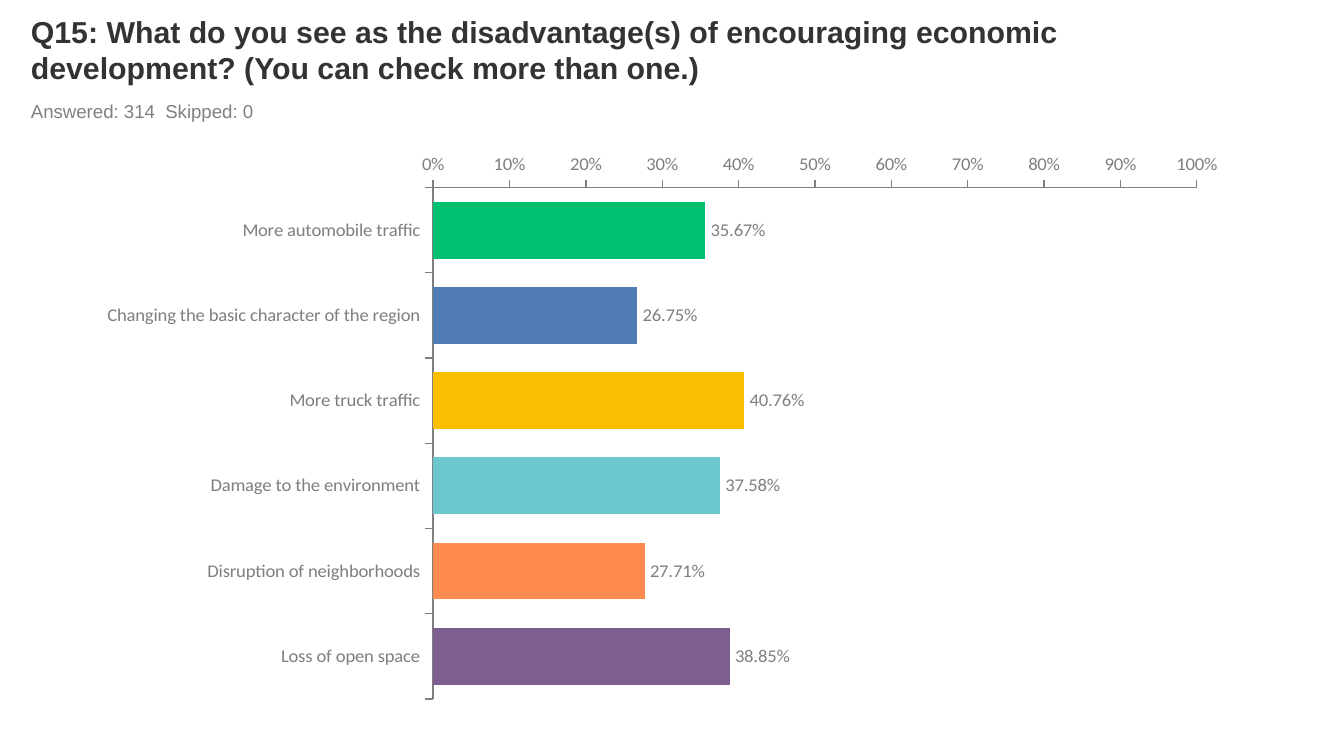
"""Build the survey slide for question 15 with its bar chart of answers."""
from lxml.etree import SubElement
from pptx import Presentation
from pptx.chart.data import CategoryChartData
from pptx.dml.color import RGBColor
from pptx.enum.chart import (XL_CHART_TYPE, XL_LABEL_POSITION,
                             XL_TICK_LABEL_POSITION, XL_TICK_MARK)
from pptx.enum.text import MSO_ANCHOR, MSO_AUTO_SIZE, PP_ALIGN
from pptx.oxml.ns import qn
from pptx.util import Inches, Pt

DARK = RGBColor(0x33, 0x33, 0x33)
GRAY = RGBColor(0x80, 0x80, 0x80)
AXIS_GRAY = RGBColor(0x7F, 0x7F, 0x7F)
GREEN = RGBColor(0x00, 0xBF, 0x6F)
BLUE = RGBColor(0x50, 0x7C, 0xB6)
YELLOW = RGBColor(0xF9, 0xBE, 0x00)
TEAL = RGBColor(0x6B, 0xC8, 0xCD)
ORANGE = RGBColor(0xFF, 0x8B, 0x4F)
PURPLE = RGBColor(0x7D, 0x5E, 0x90)

QUESTION = ("Q15: What do you see as the disadvantage(s) of encouraging economic "
            "development? (You can check more than one.)")
ANSWERS = [
    ("More automobile traffic", 0.3567, GREEN),
    ("Changing the basic character of the region", 0.2675, BLUE),
    ("More truck traffic", 0.4076, YELLOW),
    ("Damage to the environment", 0.3758, TEAL),
    ("Disruption of neighborhoods", 0.2771, ORANGE),
    ("Loss of open space", 0.3885, PURPLE),
]
PLOT_LAYOUT = {"layoutTarget": "inner", "xMode": "edge", "yMode": "edge",
               "x": 0.3, "y": 0.02, "w": 0.66, "h": 0.9}


def set_attributes(target, values):
    for name, value in values.items():
        setattr(target, name, value)


def set_font(font, color, values):
    set_attributes(font, values)
    font.color.rgb = color


presentation = Presentation()
set_attributes(presentation, {"slide_width": Inches(10),
                              "slide_height": Inches(10) * 9 // 16})
slide = presentation.slides.add_slide(presentation.slide_layouts[1])
title, response_count = slide.placeholders

properties = response_count.text_frame.paragraphs[0]._p.get_or_add_pPr()
properties.set("marL", "0")
properties.set("indent", "0")
SubElement(properties, qn("a:buNone"))
tab_list = SubElement(properties, qn("a:tabLst"))
SubElement(tab_list, qn("a:tab"), pos=str(Inches(1.04)), algn="l")

for placeholder, text, top, height, anchor, color, font_values in [
    (title, QUESTION, 0.09, 0.6, MSO_ANCHOR.BOTTOM, DARK,
     {"name": "Arial", "size": Pt(16.2), "bold": True}),
    (response_count, "Answered: 314\tSkipped: 0", 0.69, 0.26, MSO_ANCHOR.TOP, GRAY,
     {"name": "Arial", "size": Pt(10), "bold": False}),
]:
    set_attributes(placeholder, {"left": Inches(0.13), "top": Inches(top),
                                 "width": Inches(9), "height": Inches(height)})
    set_attributes(placeholder.text_frame, {
        "word_wrap": True, "auto_size": MSO_AUTO_SIZE.NONE, "vertical_anchor": anchor})
    paragraph = placeholder.text_frame.paragraphs[0]
    set_attributes(paragraph, {"alignment": PP_ALIGN.LEFT, "space_before": Pt(0)})
    run = paragraph.add_run()
    run.text = text
    set_font(run.font, color, font_values)

chart_data = CategoryChartData(number_format="0.00%")
chart_data.categories = [label for label, share, color in ANSWERS]
chart_data.add_series("Series 1", [share for label, share, color in ANSWERS])
chart = slide.shapes.add_chart(
    XL_CHART_TYPE.BAR_CLUSTERED, Inches(0.64), Inches(1.15),
    Inches(8.61), Inches(4.39), chart_data).chart
set_attributes(chart, {"has_title": False, "has_legend": False})
set_font(chart.font, DARK, {"name": "Calibri", "size": Pt(18)})

plot_area = chart.element.find(".//" + qn("c:plotArea"))
for old_layout in plot_area.findall(qn("c:layout")):
    plot_area.remove(old_layout)
layout = SubElement(plot_area, qn("c:layout"))
plot_area.insert(0, layout)
manual_layout = SubElement(layout, qn("c:manualLayout"))
for name, value in PLOT_LAYOUT.items():
    SubElement(manual_layout, qn("c:" + name), val=str(value))

small_text = {"name": "Calibri", "size": Pt(10)}
for axis in (chart.category_axis, chart.value_axis):
    set_attributes(axis, {"has_major_gridlines": False,
                          "major_tick_mark": XL_TICK_MARK.OUTSIDE,
                          "minor_tick_mark": XL_TICK_MARK.NONE})
    set_font(axis.tick_labels.font, AXIS_GRAY, small_text)
    axis.format.line.width = Pt(0.75)
    axis.format.line.color.rgb = AXIS_GRAY
set_attributes(chart.category_axis, {
    "reverse_order": True, "crosses_at": len(ANSWERS) + 1,
    "tick_label_position": XL_TICK_LABEL_POSITION.LOW})
set_attributes(chart.value_axis, {
    "minimum_scale": 0, "maximum_scale": 1, "major_unit": 0.1})
set_attributes(chart.value_axis.tick_labels, {
    "number_format": "0%", "number_format_is_linked": False})

plot = chart.plots[0]
set_attributes(plot, {"gap_width": 50, "overlap": 100,
                      "vary_by_categories": False, "has_data_labels": True})
set_attributes(plot.data_labels, {
    "show_value": True, "number_format": "0.00%", "number_format_is_linked": False,
    "position": XL_LABEL_POSITION.OUTSIDE_END})
set_font(plot.data_labels.font, AXIS_GRAY, small_text)

series = plot.series[0]
series.format.fill.solid()
series.format.fill.fore_color.rgb = GREEN
for index, (label, share, color) in enumerate(ANSWERS):
    fill = series.points[index].format.fill
    fill.solid()
    fill.fore_color.rgb = color

presentation.save("out.pptx")
